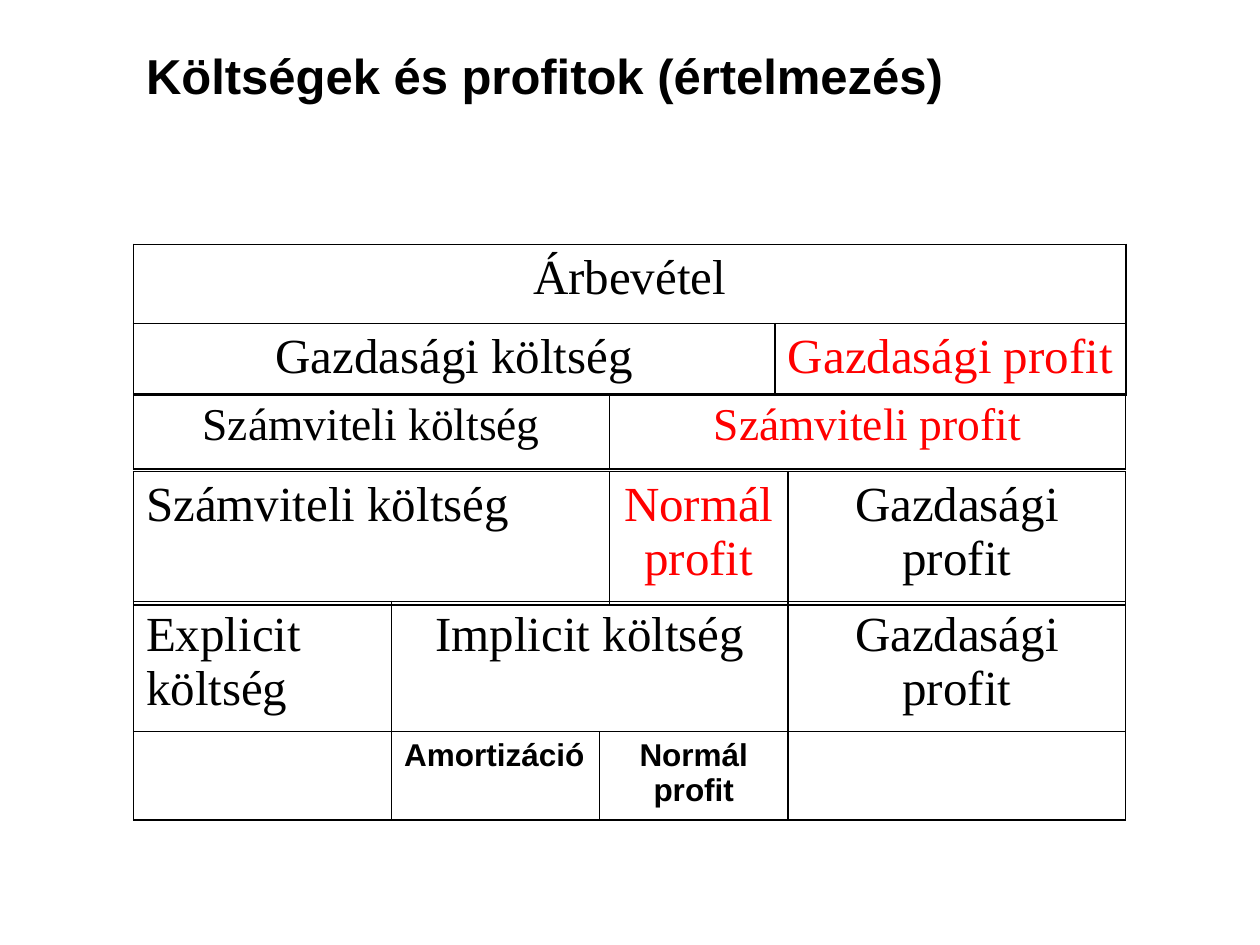
from dataclasses import dataclass

from lxml.etree import SubElement
from pptx import Presentation
from pptx.dml.color import RGBColor
from pptx.enum.text import MSO_ANCHOR, MSO_AUTO_SIZE, PP_ALIGN
from pptx.oxml.ns import qn
from pptx.util import Pt

COLORS = {"ink": "000000", "profit": "FF0000"}
LEFT = 76.3


@dataclass
class Cell:
    text: str = ""
    size: float = 28
    color: str = "ink"
    font: str = "Times New Roman"
    bold: bool = False
    align: PP_ALIGN = PP_ALIGN.CENTER
    span: int = 1


@dataclass
class Band:
    top: float
    widths: list[float]
    heights: list[float]
    rows: list[list[Cell]]


def write_text(frame, text: str, *, size: float, color: str, font: str,
               bold: bool, align: PP_ALIGN) -> None:
    """Fill a text frame, one paragraph for each line of text."""
    for index, line in enumerate(text.split("\n")):
        para = frame.paragraphs[0] if index == 0 else frame.add_paragraph()
        para.alignment = align
        span = para.add_run()
        span.text = line
        span.font.size = Pt(size)
        span.font.name = font
        span.font.bold = bold
        span.font.color.rgb = RGBColor.from_string(COLORS[color])


def add_borders(cell) -> None:
    """Draw a thin line on all four sides; lines precede the fill."""
    cell.fill.background()
    properties = cell._tc.get_or_add_tcPr()
    for index, side in enumerate(("lnL", "lnR", "lnT", "lnB")):
        line = SubElement(properties, qn(f"a:{side}"), w=str(Pt(1)))
        fill = SubElement(line, qn("a:solidFill"))
        SubElement(fill, qn("a:srgbClr"), val=COLORS["ink"])
        properties.insert(index, line)


def add_band(page, band: Band) -> None:
    """Draw one strip of the breakdown as a table."""
    table = page.shapes.add_table(
        len(band.heights), len(band.widths), Pt(LEFT), Pt(band.top),
        Pt(sum(band.widths)), Pt(sum(band.heights))).table
    table.first_row = table.horz_banding = False
    for column, width in zip(table.columns, band.widths):
        column.width = Pt(width)
    for row, height in zip(table.rows, band.heights):
        row.height = Pt(height)
    for cell in table.iter_cells():
        add_borders(cell)
    for row_index, row in enumerate(band.rows):
        column_index = 0
        for item in row:
            cell = table.cell(row_index, column_index)
            if item.span > 1:
                cell.merge(table.cell(row_index, column_index + item.span - 1))
            if item.text:
                write_text(cell.text_frame, item.text, size=item.size,
                           color=item.color, font=item.font, bold=item.bold,
                           align=item.align)
            column_index += item.span


BANDS = [
    Band(139.7, [567], [45.2], [[Cell("Árbevétel")]]),
    Band(184.9, [366.5, 200.5], [39.7],
         [[Cell("Gazdasági költség"), Cell("Gazdasági profit", color="profit")]]),
    Band(225, [272, 295], [43],
         [[Cell("Számviteli költség", size=26),
           Cell("Számviteli profit", size=26, color="profit")]]),
    Band(269.5, [272, 102, 193], [76.3],
         [[Cell("Számviteli költség", align=PP_ALIGN.LEFT),
           Cell("Normál profit", color="profit"),
           Cell("Gazdasági profit")]]),
    Band(343.6, [147.5, 118.8, 107.7, 193], [74, 50.6],
         [[Cell("Explicit költség", align=PP_ALIGN.LEFT),
           Cell("Implicit költség", span=2),
           Cell("Gazdasági profit")],
          [Cell(),
           Cell("Amortizáció", size=18, font="Arial", bold=True,
                align=PP_ALIGN.LEFT),
           Cell("Normál\nprofit", size=18, font="Arial", bold=True),
           Cell()]]),
]


def main() -> None:
    deck = Presentation()
    deck.slide_width, deck.slide_height = Pt(720), Pt(540)
    page = deck.slides.add_slide(deck.slide_layouts[5])

    # Title
    title = page.shapes.title
    title.left, title.top = Pt(LEFT), Pt(22.3)
    title.width, title.height = Pt(538.6), Pt(41)
    frame = title.text_frame
    frame.word_wrap = True
    frame.auto_size = MSO_AUTO_SIZE.SHAPE_TO_FIT_TEXT
    frame.vertical_anchor = MSO_ANCHOR.TOP
    write_text(frame, "Költségek és profitok (értelmezés)", size=28,
               color="ink", font="Arial", bold=True, align=PP_ALIGN.LEFT)

    # Stacked breakdown of revenue
    for band in BANDS:
        add_band(page, band)

    deck.save("out.pptx")


if __name__ == "__main__":
    main()
